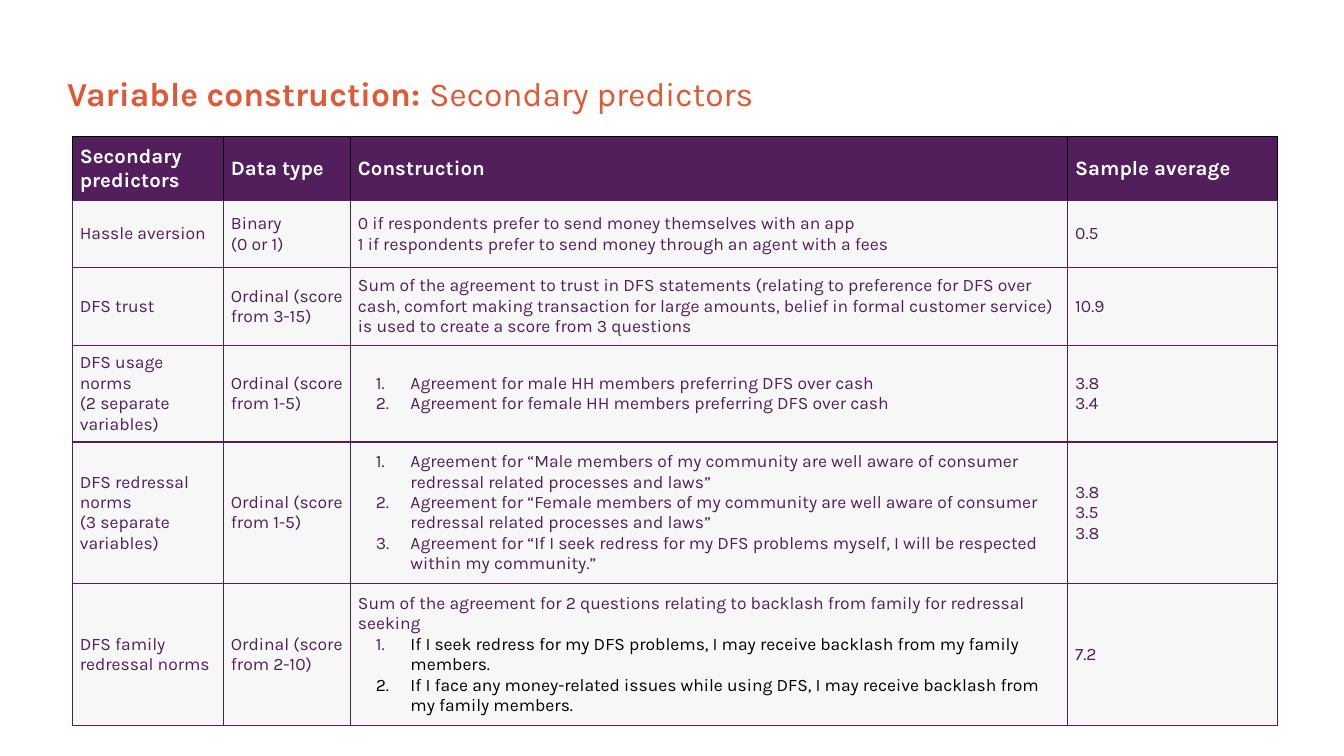
from lxml import etree
from pptx import Presentation
from pptx.dml.color import RGBColor
from pptx.enum import text as t
from pptx.oxml import ns
from pptx.util import Inches, Pt

COLORS = {"orange": "DD5938", "purple": "521F5C", "pale": "F7F7F7",
          "white": "FFFFFF", "black": "000000"}
FONT = "Karla"


def numbered(text, color="purple", number_color="purple"):
    return {"text": text, "color": color, "number_color": number_color}


HEADERS = [["Secondary", "predictors"], ["Data type"], ["Construction"], ["Sample average"]]
PREDICTORS = [
    [["Hassle aversion"],
     ["Binary", "(0 or 1)"],
     ["0 if respondents prefer to send money themselves with an app",
      "1 if respondents prefer to send money through an agent with a fees"],
     ["0.5"]],
    [["DFS trust"],
     ["Ordinal (score from 3-15)"],
     ["Sum of the agreement to trust in DFS statements (relating to preference for DFS over "
      "cash, comfort making transaction for large amounts, belief in formal customer service) "
      "is used to create a score from 3 questions"],
     ["10.9"]],
    [["DFS usage norms", "(2 separate variables)"],
     ["Ordinal (score from 1-5)"],
     [numbered("Agreement for male HH members preferring DFS over cash"),
      numbered("Agreement for female HH members preferring DFS over cash")],
     ["3.8", "3.4"]],
    [["DFS redressal norms", "(3 separate variables)"],
     ["Ordinal (score from 1-5)"],
     [numbered("Agreement for “Male members of my community are well aware of consumer "
               "redressal related processes and laws”"),
      numbered("Agreement for “Female members of my community are well aware of consumer "
               "redressal related processes and laws”"),
      numbered("Agreement for “If I seek redress for my DFS problems myself, I will be "
               "respected within my community.”")],
     ["3.8", "3.5", "3.8"]],
    [["DFS family redressal norms"],
     ["Ordinal (score from 2-10)"],
     ["Sum of the agreement for 2 questions relating to backlash from family for redressal "
      "seeking",
      numbered("If I seek redress for my DFS problems, I may receive backlash from my family "
               "members.", "black"),
      numbered("If I face any money-related issues while using DFS, I may receive backlash "
               "from my family members.", "black", "black")],
     ["7.2"]],
]
COLUMN_WIDTHS = [1.44, 1.21, 6.83, 2]
ROW_HEIGHTS = [0.61, 0.64, 0.74, 0.92, 1.35, 1.35]


def add_text(paragraph, text, size=12, color="purple", bold=False):
    run = paragraph.add_run()
    run.text = text
    run.font.name = FONT
    run.font.size = Pt(size)
    run.font.bold = bold
    run.font.color.rgb = RGBColor.from_string(COLORS[color])


def add_color(parent, color):
    etree.SubElement(parent, ns.qn("a:srgbClr"), val=COLORS[color])


def number_paragraph(paragraph, color):
    properties = paragraph._p.get_or_add_pPr()
    properties.set("marL", str(Inches(0.5)))
    properties.set("indent", str(Inches(-0.33)))
    add_color(etree.SubElement(properties, ns.qn("a:buClr")), color)
    etree.SubElement(properties, ns.qn("a:buFont"), typeface=FONT)
    etree.SubElement(properties, ns.qn("a:buAutoNum"), type="arabicPeriod")


def set_borders(cell, **side_colors):
    properties = cell._tc.get_or_add_tcPr()
    for side, color in side_colors.items():
        line = etree.SubElement(properties, ns.qn(f"a:ln{side}"), w=str(Pt(1)))
        add_color(etree.SubElement(line, ns.qn("a:solidFill")), color)


def fill_cell(cell, lines, fill, edge, **text_format):
    set_borders(cell, L=edge, R=edge, T=edge, B="purple")
    cell.fill.solid()
    cell.fill.fore_color.rgb = RGBColor.from_string(COLORS[fill])
    cell.vertical_anchor = t.MSO_ANCHOR.MIDDLE
    cell.margin_left = cell.margin_right = Inches(0.07)
    cell.margin_top = cell.margin_bottom = Inches(0.07)
    frame = cell.text_frame
    for index, line in enumerate(lines):
        paragraph = frame.add_paragraph() if index else frame.paragraphs[0]
        if isinstance(line, dict):
            number_paragraph(paragraph, line["number_color"])
            add_text(paragraph, line["text"], color=line["color"])
        else:
            add_text(paragraph, line, **text_format)


def add_title(slide, left, top, width, height):
    title = slide.shapes.title
    title.left, title.top = Inches(left), Inches(top)
    title.width, title.height = Inches(width), Inches(height)
    frame = title.text_frame
    frame.margin_left = frame.margin_right = frame.margin_top = frame.margin_bottom = 0
    frame.vertical_anchor = t.MSO_ANCHOR.MIDDLE
    frame.auto_size = t.MSO_AUTO_SIZE.NONE
    frame.word_wrap = True
    heading = frame.paragraphs[0]
    heading.alignment = t.PP_ALIGN.LEFT
    add_text(heading, "Variable construction: ", size=23, color="orange", bold=True)
    add_text(heading, "Secondary predictors", size=23, color="orange")


def add_predictor_table(slide, left, top):
    table = slide.shapes.add_table(
        len(ROW_HEIGHTS), len(COLUMN_WIDTHS), Inches(left), Inches(top),
        Inches(sum(COLUMN_WIDTHS)), Inches(sum(ROW_HEIGHTS))).table
    table.horz_banding = False
    for column, width in zip(table.columns, COLUMN_WIDTHS):
        column.width = Inches(width)
    for row, height in zip(table.rows, ROW_HEIGHTS):
        row.height = Inches(height)
    for column, lines in enumerate(HEADERS):
        fill_cell(table.cell(0, column), lines, "purple", "black",
                  size=14, color="white", bold=True)
    for row, predictor in enumerate(PREDICTORS, start=1):
        for column, lines in enumerate(predictor):
            fill_cell(table.cell(row, column), lines, "pale", "purple")


def main():
    deck = Presentation()
    deck.slide_width, deck.slide_height = Inches(12.8), Inches(7.2)
    title_only = deck.slide_layouts[5]
    slide = deck.slides.add_slide(title_only)
    add_title(slide, 0.64, 0.29, 11.52, 1.2)
    add_predictor_table(slide, 0.69, 1.3)
    deck.save("out.pptx")


if __name__ == "__main__":
    main()
